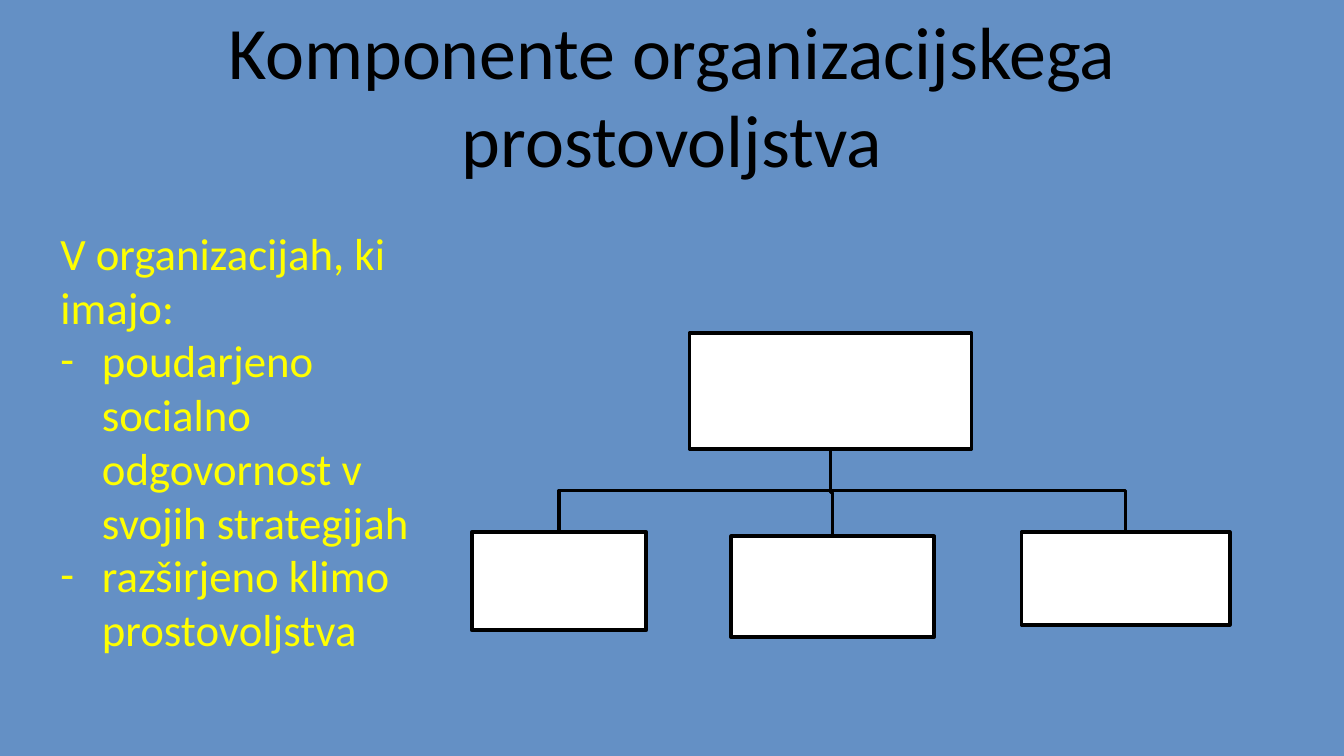
from lxml.etree import SubElement
from pptx import Presentation
from pptx.dml.color import RGBColor
from pptx.enum.shapes import MSO_SHAPE as Shape
from pptx.enum.text import MSO_ANCHOR as Anchor, PP_ALIGN as Align
from pptx.oxml.ns import qn
from pptx.util import Inches, Pt

COLORS = {"background": "6490C5", "title": "000000", "body": "FFFF00",
          "box": "FFFFFF", "line": "000000"}
FONT = "Calibri"
TITLE = "Komponente organizacijskega prostovoljstva"
INTRO = "V organizacijah, ki imajo:"
CONDITIONS = ["poudarjeno socialno odgovornost v svojih strategijah",
              "razširjeno klimo prostovoljstva"]
PARENT = (5.13, 2.48, 2.1, 0.86)
CHILDREN = [(3.51, 3.96, 1.3, 0.73), (5.44, 3.99, 1.51, 0.75), (7.6, 3.96, 1.55, 0.69)]
SLIDE_WIDTH = 10
LINE_WIDTH = 2
INDENT = 0.31


def color(name):
    return RGBColor.from_string(COLORS[name])


def add_text(area, lines, *, size, ink, align=Align.LEFT, anchor=Anchor.TOP, bullets=()):
    frame = slide.shapes.add_textbox(*map(Inches, area)).text_frame
    frame.word_wrap = True
    frame.vertical_anchor = anchor
    for index, line in enumerate(lines):
        para = frame.paragraphs[0] if index == 0 else frame.add_paragraph()
        para.alignment = align
        span = para.add_run()
        span.text = line
        span.font.name = FONT
        span.font.size = Pt(size)
        span.font.color.rgb = color(ink)
        if line in bullets:
            properties = para._p.get_or_add_pPr()
            properties.set("marL", str(Inches(INDENT)))
            properties.set("indent", str(-Inches(INDENT)))
            SubElement(properties, qn("a:buFont"), typeface=FONT)
            SubElement(properties, qn("a:buChar"), char="-")


def outline(shape):
    shape.shadow.inherit = False
    shape.line.color.rgb = color("line")
    shape.line.width = Pt(LINE_WIDTH)


def add_branch(parent, child):
    start_x, start_y = parent[0] + parent[2] / 2, parent[1] + parent[3]
    end_x, end_y = child[0] + child[2] / 2, child[1]
    middle_y = (start_y + end_y) / 2
    builder = slide.shapes.build_freeform(Inches(start_x), Inches(start_y))
    bends = [(start_x, middle_y), (end_x, middle_y), (end_x, end_y)]
    builder.add_line_segments([(Inches(x), Inches(y)) for x, y in bends], close=False)
    branch = builder.convert_to_shape()
    branch.fill.background()
    outline(branch)


def add_box(area):
    box = slide.shapes.add_shape(Shape.RECTANGLE, *map(Inches, area))
    box.fill.solid()
    box.fill.fore_color.rgb = color("box")
    outline(box)


deck = Presentation()
deck.slide_width, deck.slide_height = Inches(SLIDE_WIDTH), Inches(SLIDE_WIDTH * 9 / 16)
slide = deck.slides.add_slide(deck.slide_layouts[6])
slide.background.fill.solid()
slide.background.fill.fore_color.rgb = color("background")

add_text((0.5, 0.23, 9, 0.94), [TITLE], size=39.6, ink="title",
         align=Align.CENTER, anchor=Anchor.MIDDLE)
for child in CHILDREN:
    add_branch(PARENT, child)
for area in [PARENT, *CHILDREN]:
    add_box(area)
add_text((0.35, 1.63, 2.99, 3.33), [INTRO, *CONDITIONS], size=24, ink="body",
         bullets=CONDITIONS)

deck.save("out.pptx")
